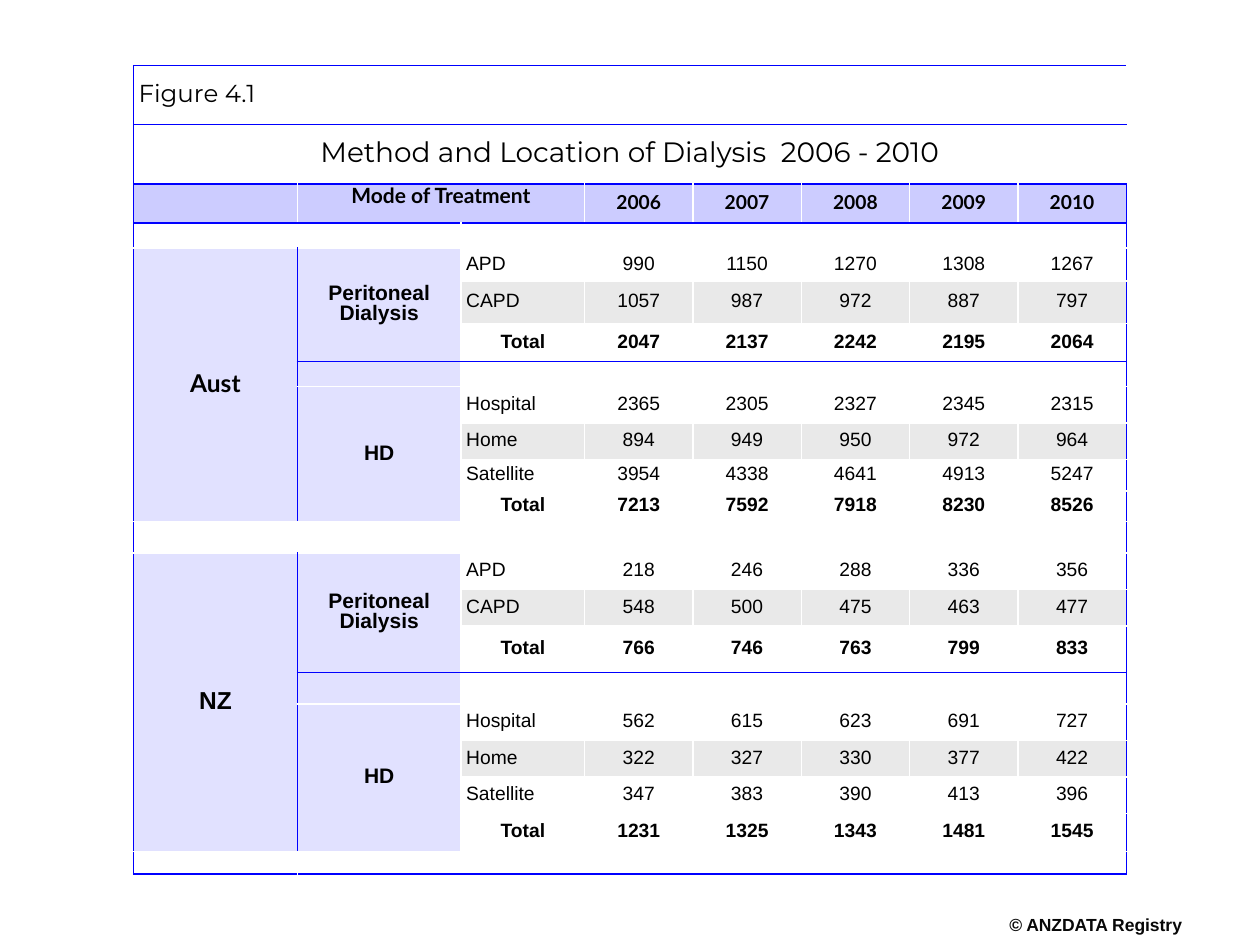
from pptx import Presentation
from pptx.dml.color import RGBColor
from pptx.enum.text import MSO_ANCHOR, PP_ALIGN
from pptx.oxml.ns import qn
from pptx.util import Inches, Pt
from lxml import etree

LEFT, CENTER = PP_ALIGN.LEFT, PP_ALIGN.CENTER
TOP, MIDDLE = MSO_ANCHOR.TOP, MSO_ANCHOR.MIDDLE
COLORS = {"line": "0000FF", "head": "CCCCFF", "group": "E1E1FF",
          "band": "E9E9E9", "text": "000000", "credit": "080808"}
COLS = [1.3, 1.3, 0.98] + [0.86] * 5
ROWS = [0.47, 0.47, 0.31, 0.2,
        0.26, 0.34, 0.3, 0.2, 0.29, 0.29, 0.25, 0.24, 0.25,
        0.29, 0.29, 0.37, 0.25, 0.29, 0.29, 0.29, 0.3, 0.18]
YEARS = ["2006", "2007", "2008", "2009", "2010"]
MODES = ["APD", "CAPD", "Total", "Hospital", "Home", "Satellite", "Total"]
AUST = [[990, 1150, 1270, 1308, 1267],
        [1057, 987, 972, 887, 797],
        [2047, 2137, 2242, 2195, 2064],
        [2365, 2305, 2327, 2345, 2315],
        [894, 949, 950, 972, 964],
        [3954, 4338, 4641, 4913, 5247],
        [7213, 7592, 7918, 8230, 8526]]
NZ = [[218, 246, 288, 336, 356],
      [548, 500, 475, 463, 477],
      [766, 746, 763, 799, 833],
      [562, 615, 623, 691, 727],
      [322, 327, 330, 377, 422],
      [347, 383, 390, 413, 396],
      [1231, 1325, 1343, 1481, 1545]]


def write(frame, text, size=11, font="Arial", bold=False, align=CENTER,
          color="text", after=None):
    for i, line in enumerate(text.split("\n")):
        para = frame.paragraphs[0] if i == 0 else frame.add_paragraph()
        para.alignment = align
        para.line_spacing = 0.85
        if after:
            para.space_after = Pt(after)
        run = para.add_run()
        run.text = line
        run.font.size = Pt(size)
        run.font.name = font
        run.font.bold = bold
        run.font.color.rgb = RGBColor.from_string(COLORS[color])


def fill(cell, color):
    cell.fill.solid()
    cell.fill.fore_color.rgb = RGBColor.from_string(COLORS[color])


def edge(cell, sides):
    """Rule the given sides, a string of L, R, T and B in that order."""
    props = cell._tc.get_or_add_tcPr()
    for i, side in enumerate(sides):
        line = etree.Element(qn(f"a:ln{side}"), w=str(Pt(1)))
        solid = etree.SubElement(line, qn("a:solidFill"))
        etree.SubElement(solid, qn("a:srgbClr"), val=COLORS["line"])
        props.insert(i, line)


def clear(cell):
    """Plain cell whose empty text does not stretch its row."""
    cell.fill.background()
    cell.margin_left = cell.margin_right = Inches(0.04)
    cell.margin_top = cell.margin_bottom = Inches(0.02)
    cell.vertical_anchor = MIDDLE
    para = cell.text_frame.paragraphs[0]
    etree.SubElement(para._p, qn("a:endParaRPr"), sz="800")


def heading(table):
    # Figure number and title
    for row, text, size, align in (
            (0, "Figure 4.1", 14, LEFT),
            (1, "Method and Location of Dialysis  2006 - 2010", 16, CENTER)):
        cell = table.cell(row, 0)
        cell.merge(table.cell(row, 7))
        write(cell.text_frame, text, size=size, font="Montserrat", align=align)

    # Column heads
    for col in range(8):
        fill(table.cell(2, col), "head")
    mode = table.cell(2, 1)
    mode.merge(table.cell(2, 2))
    mode.vertical_anchor = TOP
    write(mode.text_frame, "Mode of Treatment", size=12, font="Lato", bold=True)
    for col, year in enumerate(YEARS, 3):
        write(table.cell(2, col).text_frame, year, font="Lato", bold=True)


def country(table, top, name, font, data):
    # Merged labels on the left
    fill(table.cell(top + 3, 1), "group")
    for row, col, span, text, size, face in (
            (top, 0, 8, name, 14, font),
            (top, 1, 3, "Peritoneal\nDialysis", 12, "Arial"),
            (top + 4, 1, 4, "HD", 12, "Arial")):
        cell = table.cell(row, col)
        cell.merge(table.cell(row + span - 1, col))
        fill(cell, "group")
        write(cell.text_frame, text, size=size, font=face, bold=True)

    # Counts, with a gap row between the two treatments
    for i, (mode, counts) in enumerate(zip(MODES, data)):
        row = top + i + (i > 2)
        total = mode == "Total"
        for col, value in enumerate([mode] + counts, 2):
            cell = table.cell(row, col)
            if mode in ("CAPD", "Home"):
                fill(cell, "band")
            align = LEFT if col == 2 and not total else CENTER
            write(cell.text_frame, str(value), bold=total, align=align, after=14)


def rules(table):
    """Outer frame, heading rules, and lines between the label groups."""
    over, under = {0, 1, 2, 3}, {0, 1, 2, 21}
    for row in range(len(ROWS)):
        group = 4 <= row <= 11 or 13 <= row <= 20
        for col in range(len(COLS)):
            inner = col > 0
            sides = ""
            if col == 0 or (group and col == 1):
                sides += "L"
            if col == 7 or (group and col == 0):
                sides += "R"
            if row in over or (inner and row in (7, 16)):
                sides += "T"
            if row in under or (inner and row in (6, 15)):
                sides += "B"
            edge(table.cell(row, col), sides)


def grid(slide, left, top, width, height):
    frame = slide.shapes.add_table(len(ROWS), len(COLS), left, top, width, height)
    table = frame.table
    table.first_row = table.horz_banding = False
    for col, size in zip(table.columns, COLS):
        col.width = Inches(size)
    for row, size in zip(table.rows, ROWS):
        row.height = Inches(size)
    for cell in table.iter_cells():
        clear(cell)
    heading(table)
    country(table, 4, "Aust", "Lato", AUST)
    country(table, 13, "NZ", "Arial", NZ)
    rules(table)


def credit(slide, left, top, width, height):
    frame = slide.shapes.add_textbox(left, top, width, height).text_frame
    frame.margin_left = frame.margin_right = 0
    frame.margin_top = frame.margin_bottom = 0
    frame.word_wrap = False
    write(frame, "© ANZDATA Registry", size=10, bold=True, color="credit")


def main():
    deck = Presentation()
    deck.slide_width, deck.slide_height = Inches(10), Inches(7.5)
    slide = deck.slides.add_slide(deck.slide_layouts[6])
    credit(slide, Inches(7.99), Inches(7.28), Inches(1.41), Inches(0.17))
    grid(slide, Inches(1.06), Inches(0.52), Inches(7.87), Inches(6.41))
    deck.save("out.pptx")


if __name__ == "__main__":
    main()
